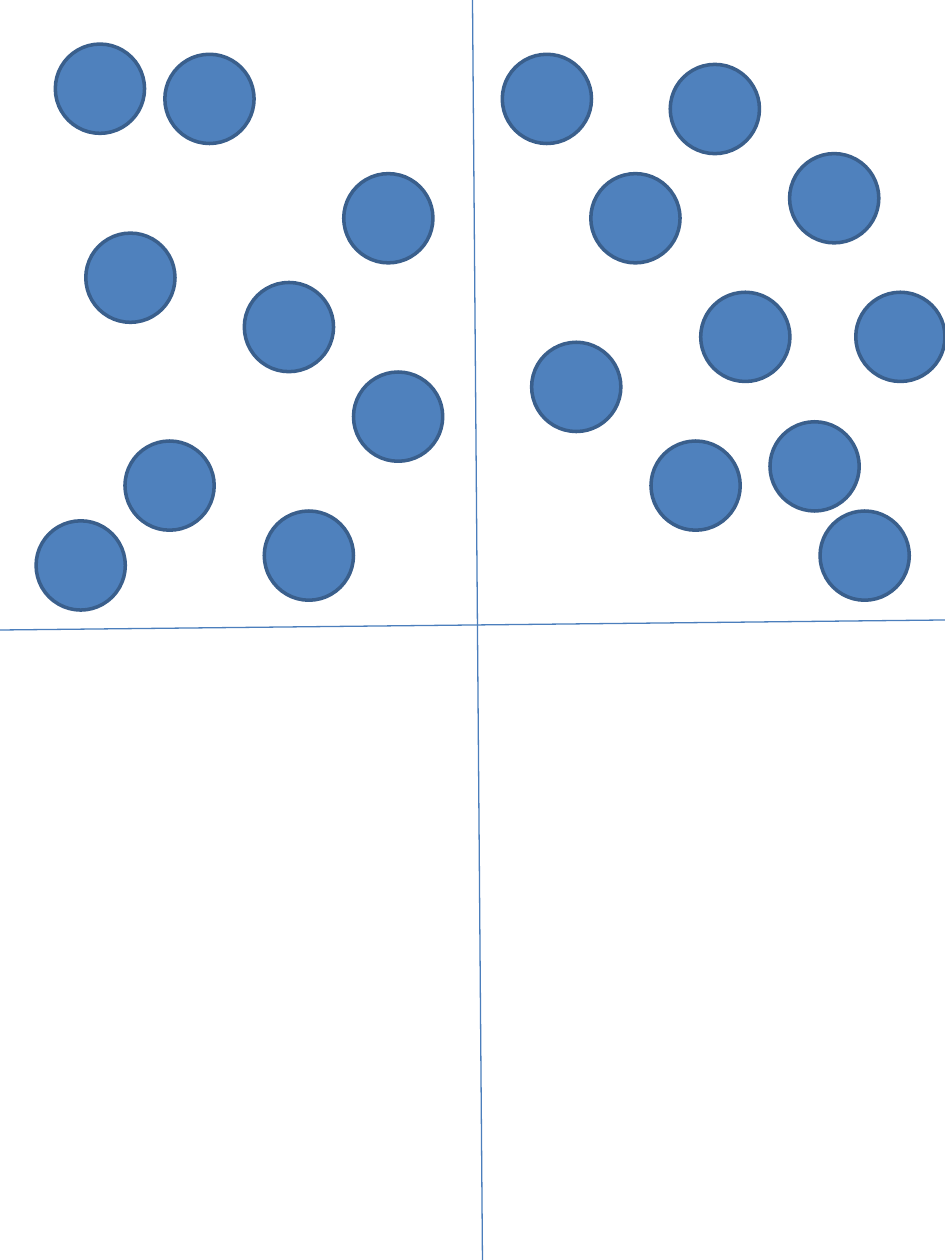
from lxml.etree import SubElement
from pptx import Presentation
from pptx.dml.color import RGBColor
from pptx.enum.shapes import MSO_CONNECTOR, MSO_SHAPE
from pptx.oxml.ns import qn
from pptx.util import Pt

WIDTH, HEIGHT = 540, 720
DIAMETER = 51
DIVIDERS = [
    ((270, 0), (275.7, HEIGHT)),
    ((0, 360), (WIDTH, 354.3)),
]
# Left and top of each counter, in points
RIGHT_COUNTERS = [
    (468.6, 292), (440, 241), (489, 167), (372, 252), (303.8, 195.6),
    (400.4, 167), (337.6, 99.2), (451.2, 87.8), (383, 36.8), (287, 31),
]
LEFT_COUNTERS = [
    (20.6, 297.6), (151, 292), (202, 212.6), (71.4, 252), (139.6, 161.4),
    (196.4, 99.2), (49, 133.2), (31.6, 25.2),
]
COUNTERS = [(94.2, 31)] + RIGHT_COUNTERS + LEFT_COUNTERS


def color(hex_code):
    return RGBColor.from_string(hex_code)


def set_line(shape, hex_code, width):
    shape.line.color.rgb = color(hex_code)
    shape.line.width = Pt(width)


def add_divider(slide, start, end):
    line = slide.shapes.add_connector(
        MSO_CONNECTOR.STRAIGHT, *map(Pt, start + end))
    set_line(line, "4B7EBC", 0.75)
    SubElement(line._element.spPr, qn("a:effectLst"))


def add_counter(slide, left, top):
    counter = slide.shapes.add_shape(
        MSO_SHAPE.OVAL, Pt(left), Pt(top), Pt(DIAMETER), Pt(DIAMETER))
    counter.shadow.inherit = False
    counter.fill.solid()
    counter.fill.fore_color.rgb = color("4F81BD")
    set_line(counter, "3A5F8C", 2)


def main():
    deck = Presentation()
    deck.slide_width, deck.slide_height = Pt(WIDTH), Pt(HEIGHT)
    slide = deck.slides.add_slide(deck.slide_layouts.get_by_name("Blank"))
    for start, end in DIVIDERS:
        add_divider(slide, start, end)
    for left, top in COUNTERS:
        add_counter(slide, left, top)
    deck.save("out.pptx")


if __name__ == "__main__":
    main()
